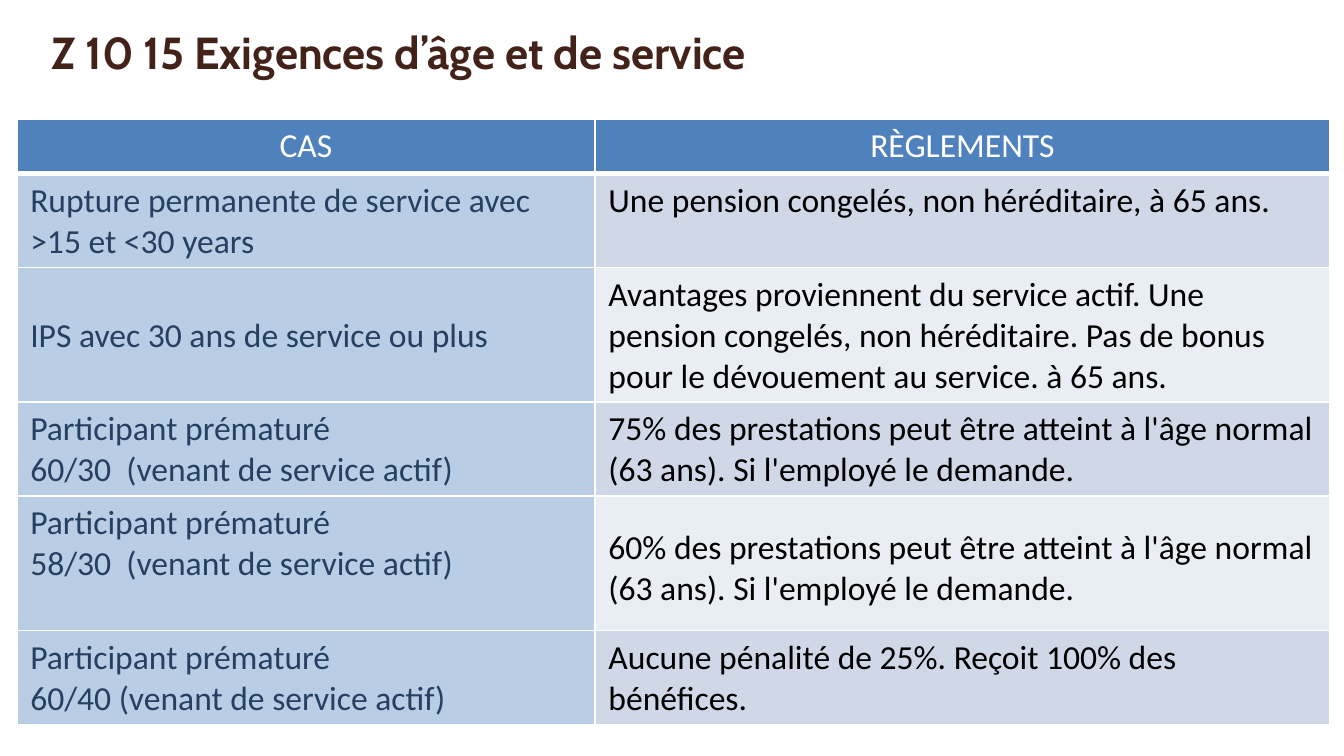
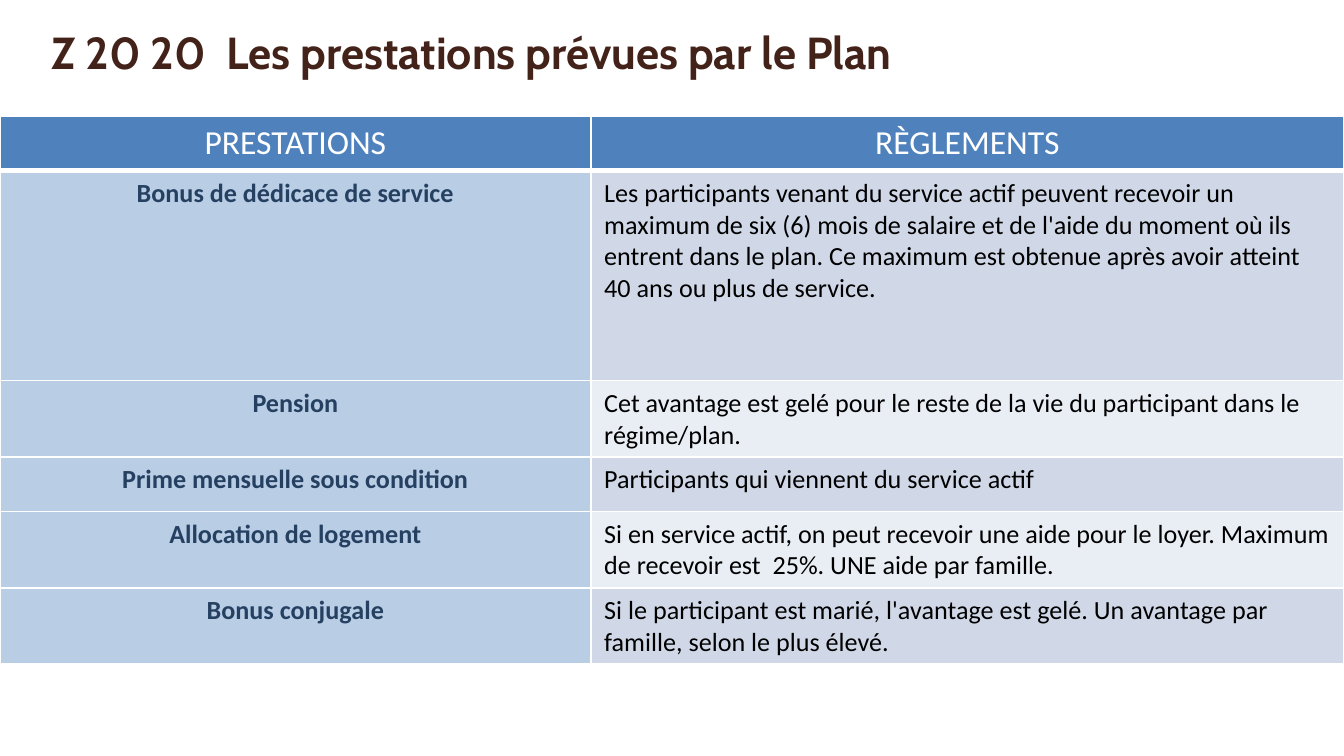
from lxml.etree import SubElement
from pptx import Presentation
from pptx.dml.color import RGBColor
from pptx.enum.text import MSO_AUTO_SIZE, PP_ALIGN
from pptx.oxml.ns import qn
from pptx.util import Emu, Pt

COLORS = {
    "title": "43221A",
    "header": "4F81BD",
    "label": "B9CDE5",
    "label_text": "254061",
    "odd": "D0D8E8",
    "even": "E9EDF4",
    "white": "FFFFFF",
    "black": "000000",
}


def px(n):
    return Emu(n * 9525)


class Deck:
    title_font = "Cabin"
    body_font = "Calibri"

    def __init__(self):
        self.prs = Presentation()
        self.prs.slide_width, self.prs.slide_height = px(960), px(540)
        self.s = None

    def color(self, name):
        return RGBColor.from_string(COLORS[name])

    def slide(self, title, width):
        self.s = self.prs.slides.add_slide(self.prs.slide_layouts[6])
        self.s.background.fill.solid()
        self.s.background.fill.fore_color.rgb = self.color("white")
        tf = self.s.shapes.add_textbox(px(27), px(13), px(width), px(48)).text_frame
        tf.word_wrap = True
        tf.auto_size = MSO_AUTO_SIZE.SHAPE_TO_FIT_TEXT
        tf.text = title
        self.format(tf, self.title_font, 24, "title", True, PP_ALIGN.LEFT)

    def format(self, tf, font, size, color, bold, align):
        for p in tf.paragraphs:
            p.alignment = align
            for r in p.runs:
                r.font.name = font
                r.font.size = Pt(size)
                r.font.bold = bold
                r.font.color.rgb = self.color(color)

    def borders(self, cell, bottom):
        tcPr = cell._tc.get_or_add_tcPr()
        for i, (tag, width) in enumerate((("lnL", 1), ("lnR", 1), ("lnT", 1), ("lnB", bottom))):
            ln = tcPr.makeelement(qn(f"a:{tag}"), {"w": str(Pt(width))})
            fill = SubElement(ln, qn("a:solidFill"))
            SubElement(fill, qn("a:srgbClr"), val=COLORS["white"])
            tcPr.insert(i, ln)

    def cell(self, cell, text, fill, color, size, bold=False, align=PP_ALIGN.LEFT, bottom=1):
        cell.fill.solid()
        cell.fill.fore_color.rgb = self.color(fill)
        cell.text_frame.text = text
        self.format(cell.text_frame, self.body_font, size, color, bold, align)
        self.borders(cell, bottom)

    def table(self, left, top, widths, heights, header, rows, size, bold, align):
        table = self.s.shapes.add_table(
            len(heights), len(widths), px(left), px(top), px(sum(widths)), px(sum(heights))
        ).table
        table.horz_banding = False
        for col, width in zip(table.columns, widths):
            col.width = px(width)
        for row, height in zip(table.rows, heights):
            row.height = px(height)
        for c, text in enumerate(header):
            self.cell(table.cell(0, c), text, "header", "white", 18,
                      align=PP_ALIGN.CENTER, bottom=3)
        for i, (label, rule) in enumerate(rows, 1):
            self.cell(table.cell(i, 0), label, "label", "label_text", size, bold, align)
            self.cell(table.cell(i, 1), rule, "odd" if i % 2 else "even", "black", size)
        return table


def age_slide(deck):
    deck.slide("Z 10 15 Exigences d’âge et de service", 635)
    rows = [
        ("Rupture permanente de service avec >15 et <30 years",
         "Une pension congelés, non héréditaire, à 65 ans."),
        ("IPS avec 30 ans de service ou plus",
         "Avantages proviennent du service actif. Une pension congelés, non héréditaire. "
         "Pas de bonus pour le dévouement au service. à 65 ans."),
        ("Participant prématuré\n60/30  (venant de service actif)",
         "75% des prestations peut être atteint à l'âge normal (63 ans). "
         "Si l'employé le demande."),
        ("Participant prématuré\n58/30  (venant de service actif)",
         "60% des prestations peut être atteint à l'âge normal (63 ans). "
         "Si l'employé le demande."),
        ("Participant prématuré\n60/40 (venant de service actif)",
         "Aucune pénalité de 25%. Reçoit 100% des bénéfices."),
    ]
    table = deck.table(12, 85, (413, 525), (39, 67, 96, 67, 96, 67),
                       ("CAS", "RÈGLEMENTS"), rows, 18, False, PP_ALIGN.LEFT)
    table.cell(2, 0).margin_top = px(34)
    table.cell(4, 1).margin_top = px(22)


def benefits_slide(deck):
    deck.slide("Z 20 20  Les prestations prévues par le Plan", 695)
    rows = [
        ("Bonus de dédicace de service",
         "Les participants venant du service actif peuvent recevoir un maximum de six (6) "
         "mois de salaire et de l'aide du moment où ils entrent dans le plan. "
         "Ce maximum est obtenue après avoir atteint 40 ans ou plus de service."),
        ("Pension",
         "Cet avantage est gelé pour le reste de la vie du participant dans le régime/plan."),
        ("Prime mensuelle sous condition",
         "Participants qui viennent du service actif"),
        ("Allocation de logement",
         "Si en service actif, on peut recevoir une aide pour le loyer. "
         "Maximum de recevoir est  25%. UNE aide par famille."),
        ("Bonus conjugale",
         "Si le participant est marié, l'avantage est gelé. "
         "Un avantage par famille, selon le plus élevé."),
    ]
    deck.table(0, 83, (422, 538), (39, 150, 54, 39, 54, 54),
               ("PRESTATIONS", "RÈGLEMENTS"), rows, 14, True, PP_ALIGN.CENTER)


def main():
    deck = Deck()
    age_slide(deck)
    benefits_slide(deck)
    deck.prs.save("out.pptx")


if __name__ == "__main__":
    main()
